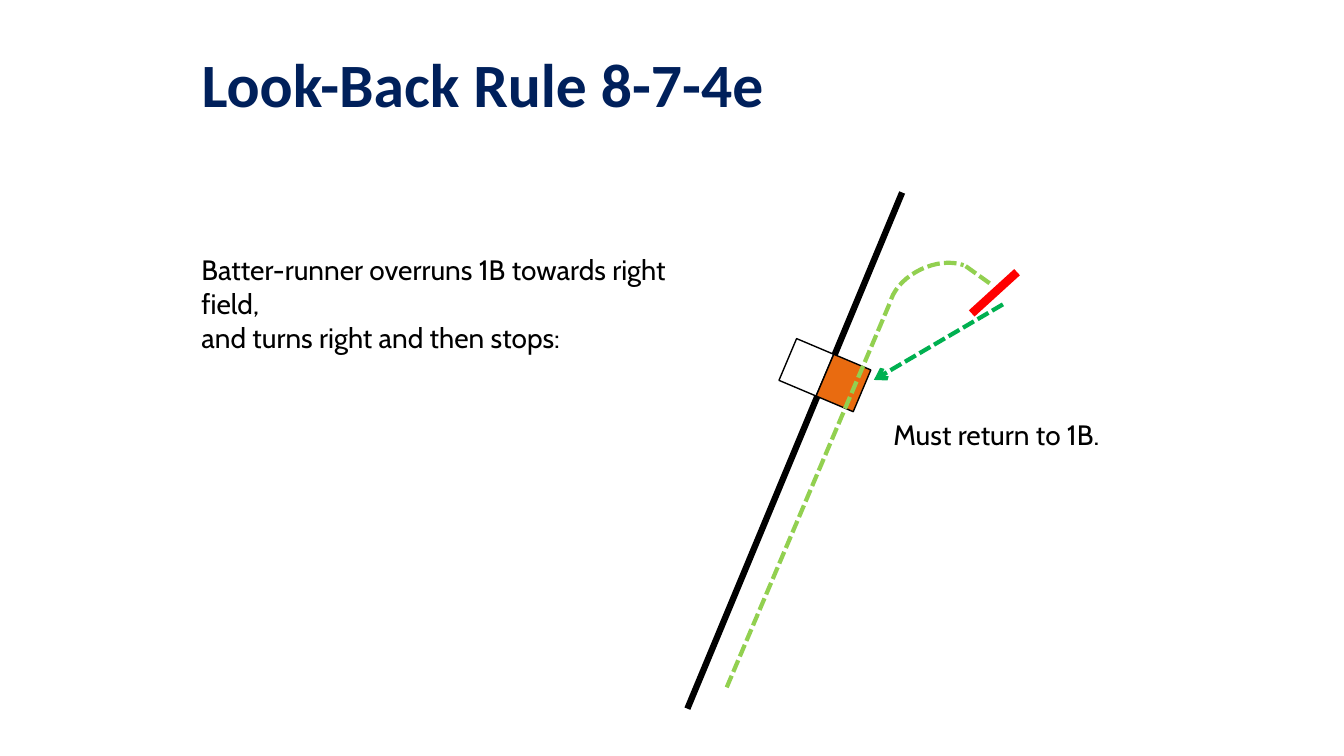
from math import cos, radians, sin

from lxml.etree import SubElement
from pptx import Presentation
from pptx.dml.color import RGBColor
from pptx.enum.dml import MSO_LINE
from pptx.enum.shapes import MSO_CONNECTOR, MSO_SHAPE
from pptx.enum.text import MSO_ANCHOR, PP_ALIGN
from pptx.oxml.ns import qn
from pptx.util import Pt

NAVY = RGBColor(0x00, 0x20, 0x5B)
BLACK = RGBColor(0x00, 0x00, 0x00)
WHITE = RGBColor(0xFF, 0xFF, 0xFF)
ORANGE = RGBColor(0xE9, 0x6B, 0x10)
RED = RGBColor(0xFF, 0x00, 0x00)
LIME = RGBColor(0x92, 0xD0, 0x50)
GREEN = RGBColor(0x00, 0xB0, 0x50)

TITLE = "Look-Back Rule 8-7-4e"
SITUATION = ["Batter-runner overruns 1B towards right field,",
             "and turns right and then stops:"]
RULING = ["Must return to 1B."]

FOUL_LINE = ((491, 506.2), (644.4, 137.5))
RUN_TO_FIRST = ((519.1, 491), (635.8, 216))
STOP_MARK = ((694.1, 223.9), (726.5, 194.4))
TURN_END = ((689.8, 190.1), (707.8, 203))
RETURN_PATH = ((716.4, 217.4), (624.2, 271.4))
TURN_CURVE = ((636.5, 213.8), (643, 195.8), (669.6, 182.9), (688.3, 189.4))
CURVE_STEPS = 16

BASE_COLORS = [WHITE, ORANGE]
BASE_LEFT, BASE_TOP = 561.6, 246.2
BASE_WIDTH, BASE_HEIGHT = 28.8, 32.4
BASE_ANGLE = 22.9


def style_line(line, color, width, dashed):
    line.color.rgb = color
    line.width = Pt(width)
    if dashed:
        line.dash_style = MSO_LINE.SQUARE_DOT


def add_line(slide, ends, color, width, dashed=False, arrow=False):
    (x1, y1), (x2, y2) = ends
    connector = slide.shapes.add_connector(
        MSO_CONNECTOR.STRAIGHT, Pt(x1), Pt(y1), Pt(x2), Pt(y2))
    style_line(connector.line, color, width, dashed)
    if arrow:
        SubElement(connector.line._get_or_add_ln(), qn("a:tailEnd"), type="arrow")
    SubElement(connector._element.spPr, qn("a:effectLst"))


def add_bases(slide):
    bases = slide.shapes.add_group_shape()
    angle = radians(BASE_ANGLE)
    for index, color in enumerate(BASE_COLORS):
        left = BASE_LEFT + index * BASE_WIDTH * cos(angle)
        top = BASE_TOP + index * BASE_WIDTH * sin(angle)
        base = bases.shapes.add_shape(
            MSO_SHAPE.RECTANGLE, Pt(left), Pt(top), Pt(BASE_WIDTH), Pt(BASE_HEIGHT))
        base.rotation = BASE_ANGLE
        base.shadow.inherit = False
        base.fill.solid()
        base.fill.fore_color.rgb = color
        style_line(base.line, BLACK, 1, False)


def curve_point(t):
    weights = ((1 - t) ** 3, 3 * t * (1 - t) ** 2, 3 * t ** 2 * (1 - t), t ** 3)
    return tuple(Pt(sum(weight * point[axis] for weight, point in zip(weights, TURN_CURVE)))
                 for axis in (0, 1))


def add_turn(slide):
    points = [curve_point(step / CURVE_STEPS) for step in range(CURVE_STEPS + 1)]
    builder = slide.shapes.build_freeform(*points[0])
    builder.add_line_segments(points[1:], close=False)
    turn = builder.convert_to_shape()
    turn.shadow.inherit = False
    turn.fill.background()
    style_line(turn.line, LIME, 3, True)


def add_text(slide, lines, left, top, width, height, wrap):
    frame = slide.shapes.add_textbox(Pt(left), Pt(top), Pt(width), Pt(height)).text_frame
    frame.word_wrap = wrap
    frame.text = "\n".join(lines)
    for paragraph in frame.paragraphs:
        paragraph.font.name = "Cabin"
        paragraph.font.size = Pt(20)
        paragraph.font.color.rgb = BLACK


def add_title(slide):
    title = slide.shapes.title
    title.left, title.top, title.width, title.height = Pt(136.8), Pt(13.7), Pt(689.8), Pt(97.9)
    title.text_frame.text = TITLE
    title.text_frame.vertical_anchor = MSO_ANCHOR.MIDDLE
    paragraph = title.text_frame.paragraphs[0]
    paragraph.alignment = PP_ALIGN.LEFT
    paragraph.line_spacing = 0.9
    paragraph.font.name = "Calibri"
    paragraph.font.size = Pt(44)
    paragraph.font.bold = True
    paragraph.font.color.rgb = NAVY


def main():
    presentation = Presentation()
    presentation.slide_width, presentation.slide_height = Pt(960), Pt(540)
    slide = presentation.slides.add_slide(presentation.slide_layouts[5])
    add_title(slide)
    add_line(slide, FOUL_LINE, BLACK, 4.5)
    add_bases(slide)
    add_line(slide, RUN_TO_FIRST, LIME, 3, dashed=True)
    add_text(slide, RULING, 631, 294.5, 166.3, 31.7, False)
    add_text(slide, SITUATION, 136.8, 177.1, 390.2, 79.2, True)
    add_line(slide, STOP_MARK, RED, 6)
    add_turn(slide)
    add_line(slide, TURN_END, LIME, 3, dashed=True)
    add_line(slide, RETURN_PATH, GREEN, 3, dashed=True, arrow=True)
    presentation.save("out.pptx")


if __name__ == "__main__":
    main()
